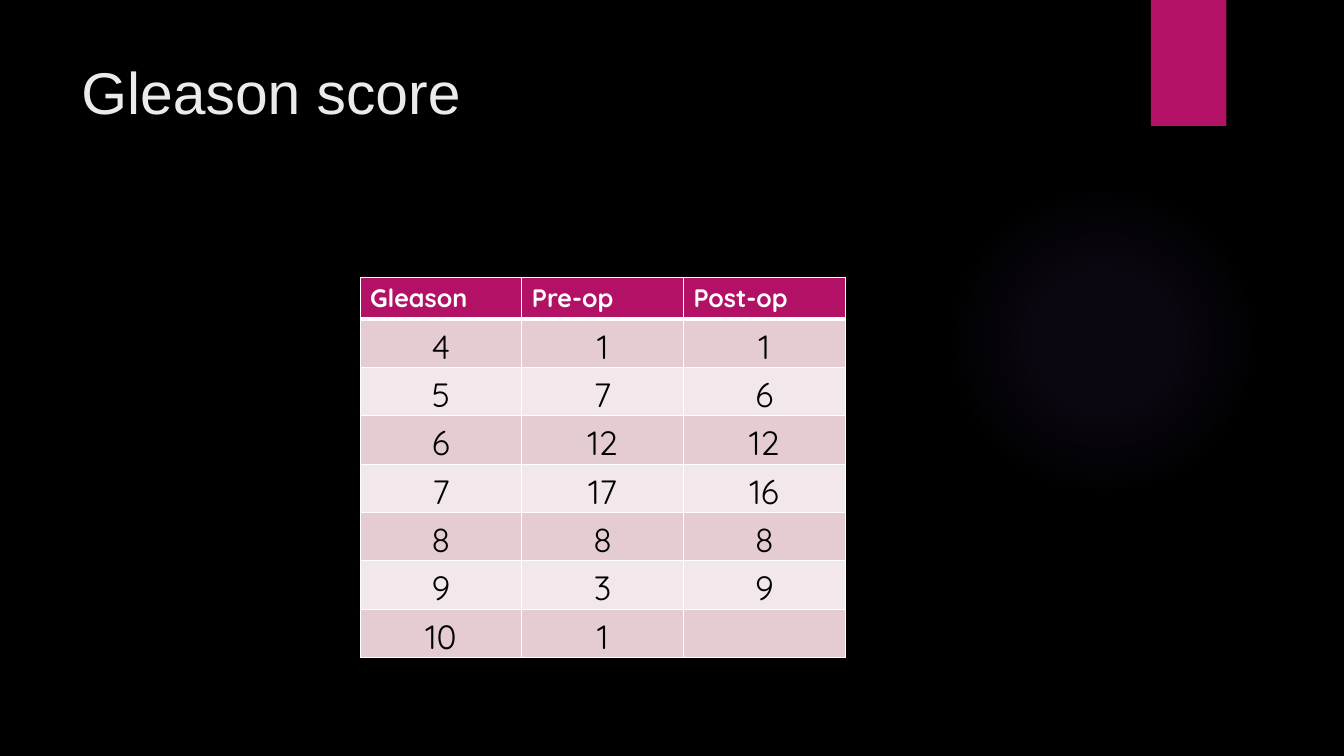
from pptx import Presentation
from pptx.dml.color import RGBColor
from pptx.enum.shapes import MSO_SHAPE
from pptx.enum.text import MSO_ANCHOR, MSO_AUTO_SIZE, PP_ALIGN
from pptx.oxml import parse_xml
from pptx.oxml.ns import nsdecls
from pptx.util import Pt

SCALE = 9525
BLACK = RGBColor(0x00, 0x00, 0x00)
WHITE = RGBColor(0xFF, 0xFF, 0xFF)
PALE = RGBColor(0xEB, 0xEB, 0xEB)
PINK = RGBColor(0xB3, 0x11, 0x66)
ROSE = RGBColor(0xE5, 0xCC, 0xD3)
BLUSH = RGBColor(0xF2, 0xE7, 0xEA)
VIOLET = RGBColor(0x9B, 0x6B, 0xF2)

TITLE = {"name": "Arial", "size": Pt(42), "bold": False}
HEAD = {"name": "Quicksand", "size": Pt(18), "bold": True}
BODY = {"name": "Quicksand", "size": Pt(24), "bold": False}

SCORES = [
    ("Gleason", "Pre-op", "Post-op"),
    ("4", "1", "1"),
    ("5", "7", "6"),
    ("6", "12", "12"),
    ("7", "17", "16"),
    ("8", "8", "8"),
    ("9", "3", "9"),
    ("10", "1", ""),
]


def px(*sizes):
    return [size * SCALE for size in sizes]


def assign(target, values):
    for key, value in values.items():
        setattr(target, key, value)


class Deck:
    def __init__(self, width, height):
        self.deck = Presentation()
        self.deck.slide_width, self.deck.slide_height = px(width, height)
        self.slide = self.deck.slides.add_slide(self.deck.slide_layouts[5])
        self.shapes = self.slide.shapes
        fill = self.slide.background.fill
        fill.solid()
        fill.fore_color.rgb = BLACK

    def shape(self, kind, box, color):
        shape = self.shapes.add_shape(kind, *px(*box))
        shape.shadow.inherit = False
        shape.fill.solid()
        shape.fill.fore_color.rgb = color
        shape.line.fill.background()
        return shape

    def glow(self, box, color, stops):
        shape = self.shape(MSO_SHAPE.OVAL, box, color)
        marks = "".join(
            f'<a:gs pos="{spot * 1000}"><a:srgbClr val="{color}">'
            f'<a:alpha val="{alpha * 1000}"/></a:srgbClr></a:gs>'
            for spot, alpha in stops
        )
        blend = parse_xml(
            f'<a:gradFill {nsdecls("a")} rotWithShape="1"><a:gsLst>{marks}</a:gsLst>'
            '<a:path path="circle"><a:fillToRect l="50000" t="50000" r="50000" b="50000"/>'
            '</a:path></a:gradFill>'
        )
        props = shape._element.spPr
        props.replace(props.find("{*}solidFill"), blend)

    def title(self, text, box):
        title = self.shapes.title
        assign(title, dict(zip(("left", "top", "width", "height"), px(*box))))
        frame = title.text_frame
        frame.text = text
        assign(frame, {
            "word_wrap": True,
            "auto_size": MSO_AUTO_SIZE.NONE,
            "vertical_anchor": MSO_ANCHOR.TOP,
        })
        para = frame.paragraphs[0]
        para.alignment = PP_ALIGN.LEFT
        assign(para.font, TITLE)
        para.font.color.rgb = PALE
        self.shapes._spTree.append(title._element)

    def border(self, cell, widths):
        props = cell._tc.get_or_add_tcPr()
        for spot, (side, width) in enumerate(zip("LRTB", widths)):
            props.insert(spot, parse_xml(
                f'<a:ln{side} {nsdecls("a")} w="{Pt(width)}"><a:solidFill>'
                f'<a:srgbClr val="{WHITE}"/></a:solidFill></a:ln{side}>'
            ))

    def cell(self, cell, text, row):
        cell.text = text
        para = cell.text_frame.paragraphs[0]
        if row:
            side = px(7)[0]
            assign(cell, {"margin_left": side, "margin_right": side,
                          "margin_top": 0, "margin_bottom": 0})
            assign(para, {"alignment": PP_ALIGN.CENTER, "line_spacing": 1.15})
        assign(para.font, BODY if row else HEAD)
        para.font.color.rgb = BLACK if row else WHITE
        cell.fill.solid()
        cell.fill.fore_color.rgb = (ROSE if row % 2 else BLUSH) if row else PINK
        self.border(cell, (1, 1, 3 if row == 1 else 1, 1 if row else 3))

    def table(self, rows, left, top, wide, high):
        count, span = len(rows), len(rows[0])
        box = px(left, top, wide * span, high * count)
        table = self.shapes.add_table(count, span, *box).table
        table.horz_banding = False
        for column in table.columns:
            column.width = px(wide)[0]
        for row, texts in enumerate(rows):
            table.rows[row].height = px(high)[0]
            for col, text in enumerate(texts):
                self.cell(table.cell(row, col), text, row)


def main():
    deck = Deck(1280, 720)
    deck.glow((903, 176, 296, 296), VIOLET, [(0, 7), (36, 6), (69, 0), (100, 0)])
    deck.shape(MSO_SHAPE.RECTANGLE, (1096, 0, 72, 120), PINK)
    deck.title("Gleason score", (68, 48, 988, 147))
    deck.table(SCORES, 343, 264, 154, 40)
    deck.deck.save("out.pptx")


if __name__ == "__main__":
    main()
